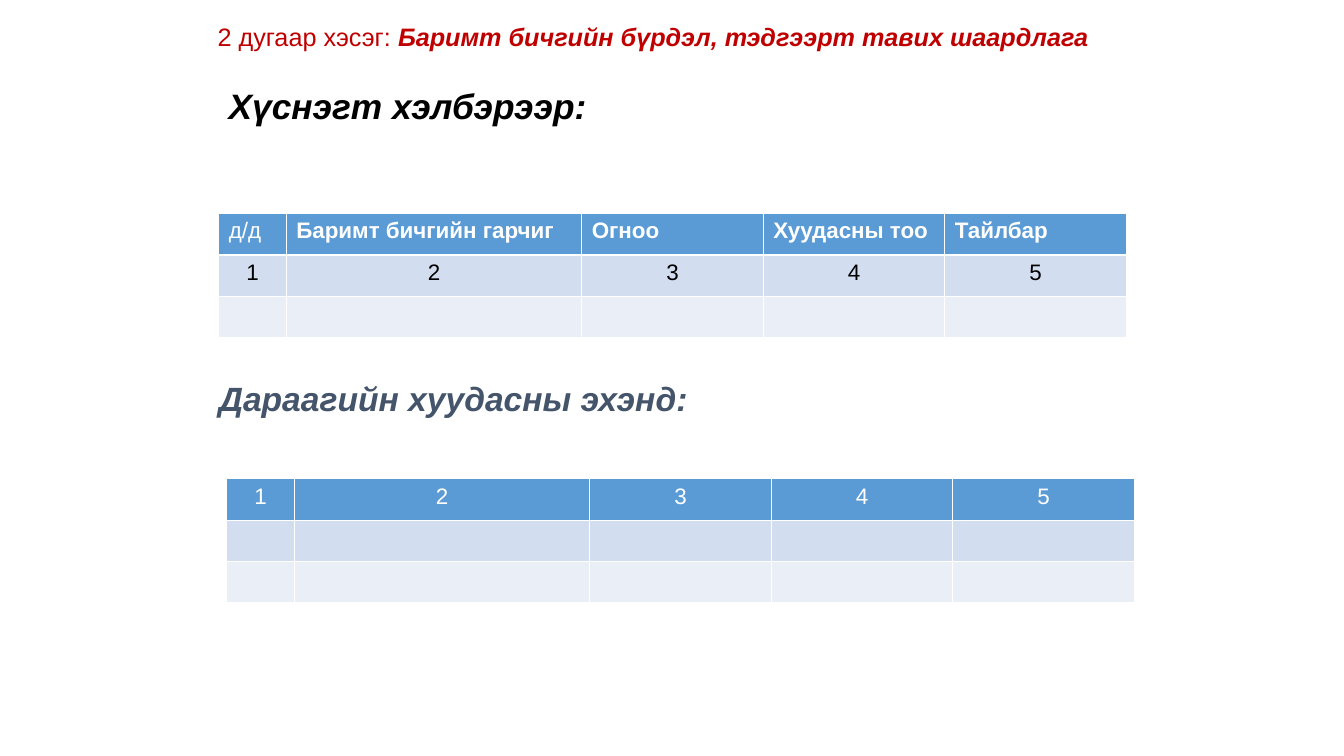
from dataclasses import dataclass

from pptx import Presentation
from pptx.dml.color import RGBColor
from pptx.enum.text import MSO_ANCHOR as Anchor, MSO_AUTO_SIZE as AutoSize, PP_ALIGN as Align
from pptx.util import Pt

EMU_PER_PX = 9144  # 100 px to the inch


@dataclass(frozen=True)
class Theme:
    font: str = "Arial"
    red: str = "C00000"
    slate: str = "44546A"
    black: str = "000000"
    white: str = "FFFFFF"
    header_fill: str = "5B9BD5"
    band_fills: tuple = ("D2DEEF", "EAEFF7")
    section_size: float = 18
    title_size: float = 25.2
    heading_size: float = 24
    table_size: float = 16


def px(value):
    return value * EMU_PER_PX


def apply_format(target, values):
    for name, value in values.items():
        setattr(target, name, value)


class SlideBuilder:
    def __init__(self, slide, theme):
        self.slide = slide
        self.theme = theme

    def add_run(self, paragraph, text, size, color, **style):
        run = paragraph.add_run()
        run.text = text
        apply_format(run.font, {"name": self.theme.font, "size": Pt(size), **style})
        run.font.color.rgb = RGBColor.from_string(color)

    def text(self, box, runs, size, color, line_spacing=None, **frame_format):
        shape = self.slide.shapes.add_textbox(*map(px, box))
        frame = shape.text_frame
        apply_format(frame, {"word_wrap": True, **frame_format})
        paragraph = frame.paragraphs[0]
        paragraph.line_spacing = line_spacing
        for content, emphasis in runs:
            self.add_run(paragraph, content, size, color, bold=emphasis, italic=emphasis)

    def table(self, left, top, widths, row_height, rows):
        """Each row is a list of (text, alignment, bold) cells."""
        theme = self.theme
        table = self.slide.shapes.add_table(
            len(rows), len(widths), px(left), px(top),
            px(sum(widths)), px(row_height * len(rows))).table
        for column, width in zip(table.columns, widths):
            column.width = px(width)
        fills = (theme.header_fill, *theme.band_fills)
        for row_index, row in enumerate(rows):
            color = theme.black if row_index else theme.white
            for column_index, (content, alignment, bold) in enumerate(row):
                cell = table.cell(row_index, column_index)
                cell.fill.solid()
                cell.fill.fore_color.rgb = RGBColor.from_string(fills[row_index])
                if content:
                    paragraph = cell.text_frame.paragraphs[0]
                    paragraph.alignment = alignment
                    self.add_run(paragraph, content, theme.table_size, color, bold=bold)


def main():
    presentation = Presentation()
    presentation.slide_width, presentation.slide_height = px(1333), px(750)
    theme = Theme()
    slide = presentation.slides.add_slide(presentation.slide_layouts[6])
    builder = SlideBuilder(slide, theme)

    # Table rows
    widths = [67, 293, 180, 180, 180]
    row_height = 41
    names = ["д/д", "Баримт бичгийн гарчиг", "Огноо", "Хуудасны тоо", "Тайлбар"]
    name_row = [(name, Align.LEFT, index > 0) for index, name in enumerate(names)]
    number_row = [(str(number), Align.CENTER, False) for number in range(1, len(widths) + 1)]
    empty_row = [("", None, False)] * len(widths)

    # First page: title and table
    builder.text((217, 83, 900, 48), [("Хүснэгт хэлбэрээр:", True)],
                 theme.title_size, theme.black, line_spacing=0.9,
                 vertical_anchor=Anchor.MIDDLE)
    builder.table(217, 212, widths, row_height, [name_row, number_row, empty_row])

    # Next page: heading and table
    builder.text((217, 367, 900, 48), [("Дараагийн хуудасны эхэнд:", True)],
                 theme.heading_size, theme.slate, vertical_anchor=Anchor.BOTTOM,
                 margin_left=0, margin_right=0, margin_bottom=0)
    builder.table(225, 475, widths, row_height, [number_row, empty_row, empty_row])

    # Section line
    builder.text((206, 16, 930, 40),
                 [("2 дугаар хэсэг: ", False),
                  ("Баримт бичгийн бүрдэл, тэдгээрт тавих шаардлага", True)],
                 theme.section_size, theme.red, auto_size=AutoSize.SHAPE_TO_FIT_TEXT)

    presentation.save("out.pptx")


if __name__ == "__main__":
    main()
